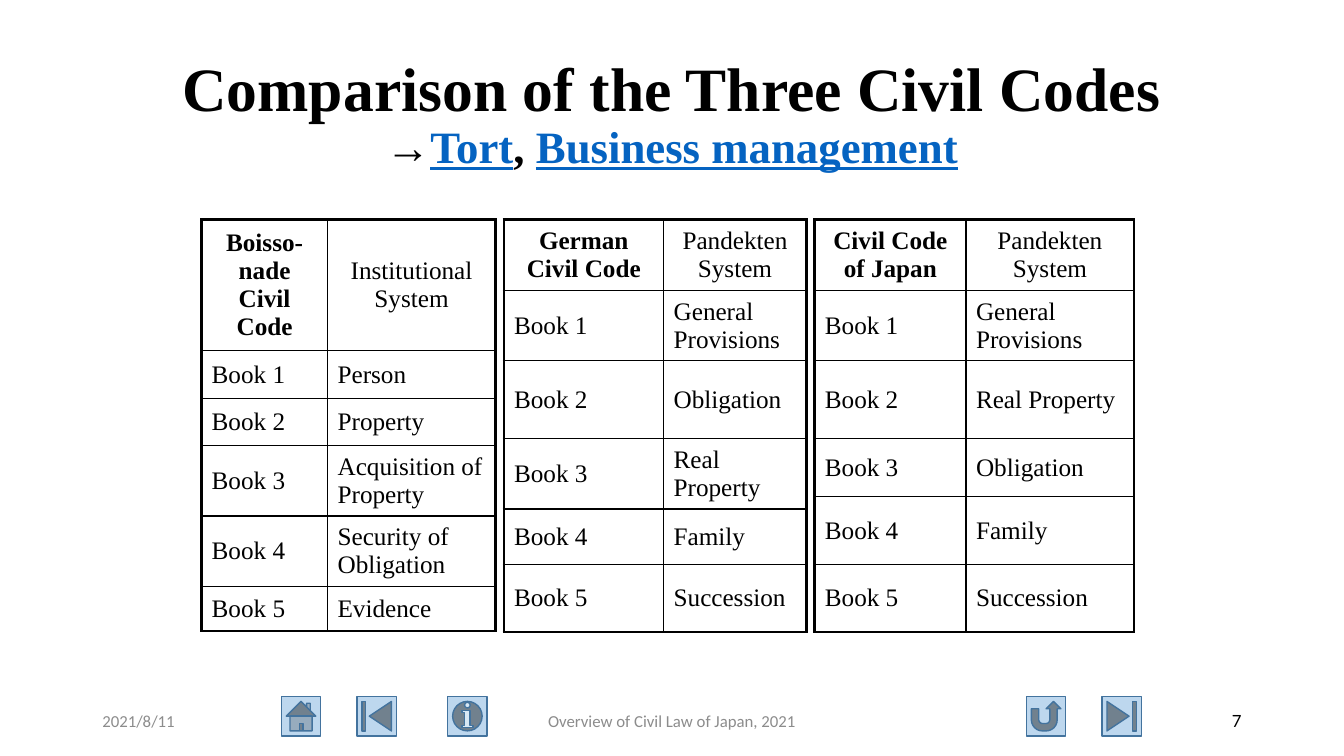
from dataclasses import dataclass
from typing import NamedTuple

from lxml.etree import SubElement
from pptx import Presentation
from pptx.dml.color import RGBColor
from pptx.enum.shapes import MSO_SHAPE as Kind
from pptx.enum.text import MSO_ANCHOR as Anchor, MSO_AUTO_SIZE as Fit, PP_ALIGN as Align
from pptx.oxml.ns import qn
from pptx.util import Inches, Pt

WIDE, HIGH = Inches(13.333), Inches(7.5)


@dataclass(frozen=True)
class Theme:
    ink: str = "000000"
    link: str = "0563C1"
    gray: str = "8C8C8C"
    fill: str = "BDD7EE"
    edge: str = "43739E"
    serif: str = "Times New Roman"
    sans: str = "Calibri"
    digit: str = "Lato"
    head: int = 44
    sub: int = 32
    cell: int = 18
    foot: int = 12
    thin: float = 1
    thick: float = 2.25


class Style(NamedTuple):
    font: str
    size: int
    color: str
    bold: bool = False
    under: bool = False


class Code(NamedTuple):
    left: int
    cols: tuple[int, int]
    rows: tuple[int, ...]
    name: str
    system: str
    books: tuple[str, ...]


class Button(NamedTuple):
    left: float
    kind: Kind


class Note(NamedTuple):
    left: float
    width: float
    text: str
    align: Align
    style: Style


THEME = Theme()
TOP = 218
HEAD = Style(THEME.serif, THEME.head, THEME.ink, True)
SUB = Style(THEME.serif, THEME.sub, THEME.ink, True)
LINK = Style(THEME.serif, THEME.sub, THEME.link, True, True)
CELL = Style(THEME.serif, THEME.cell, THEME.ink)
NAME = CELL._replace(bold=True)
FOOT = Style(THEME.sans, THEME.foot, THEME.gray)
PAGE = Style(THEME.digit, THEME.foot, THEME.ink)

CODES = (
    Code(24, (15, 20), (130, 47, 47, 70, 70, 44),
         "Boisso-nade Civil Code", "Institutional System",
         ("Person", "Property", "Acquisition of Property",
          "Security of Obligation", "Evidence")),
    Code(60, (19, 17), (70, 70, 77, 70, 55, 67),
         "German Civil Code", "Pandekten System",
         ("General Provisions", "Obligation", "Real Property",
          "Family", "Succession")),
    Code(97, (18, 20), (70, 70, 77, 58, 67, 67),
         "Civil Code of Japan", "Pandekten System",
         ("General Provisions", "Real Property", "Obligation",
          "Family", "Succession")),
)
BUTTONS = (
    Button(33.5, Kind.ACTION_BUTTON_HOME),
    Button(42.5, Kind.ACTION_BUTTON_BEGINNING),
    Button(53.3, Kind.ACTION_BUTTON_INFORMATION),
    Button(122.2, Kind.ACTION_BUTTON_RETURN),
    Button(131.2, Kind.ACTION_BUTTON_END),
)
NOTES = (
    Note(11, 36, "2021/8/11", Align.LEFT, FOOT),
    Note(53, 54, "Overview of Civil Law of Japan, 2021", Align.CENTER, FOOT),
    Note(113, 36, "7", Align.RIGHT, PAGE),
)


def col(count: float) -> int:
    """Width of grid columns, 160 to the slide."""
    return round(WIDE * count / 160)


def row(count: float) -> int:
    """Height of grid rows, 750 to the slide."""
    return round(HIGH * count / 750)


def add_run(para, text: str, style: Style) -> None:
    run = para.add_run()
    run.text = text
    font = run.font
    font.name, font.size = style.font, Pt(style.size)
    font.bold, font.underline = style.bold, style.under
    font.color.rgb = RGBColor.from_string(style.color)


def add_edge(cell, side: str, width: float) -> None:
    line = SubElement(cell._tc.get_or_add_tcPr(), qn(f"a:ln{side}"), w=str(Pt(width)))
    fill = SubElement(line, qn("a:solidFill"))
    SubElement(fill, qn("a:srgbClr"), val=THEME.ink)


def fill_cell(cell, text: str, style: Style, align: Align, outer: str) -> None:
    """Write one cell; the sides named in outer get the thick line."""
    for side in "LRTB":
        add_edge(cell, side, THEME.thick if side in outer else THEME.thin)
    cell.fill.background()
    cell.vertical_anchor = Anchor.MIDDLE
    para = cell.text_frame.paragraphs[0]
    para.alignment = align
    add_run(para, text, style)


def add_code(slide, code: Code) -> None:
    pairs = [(code.name, code.system)]
    pairs += [(f"Book {n}", book) for n, book in enumerate(code.books, 1)]
    table = slide.shapes.add_table(
        len(pairs), 2, col(code.left), row(TOP),
        col(sum(code.cols)), row(sum(code.rows))).table
    table.first_row = table.horz_banding = False
    for part, width in zip(table.columns, code.cols):
        part.width = col(width)
    for part, height in zip(table.rows, code.rows):
        part.height = row(height)
    last = len(pairs) - 1
    for y, pair in enumerate(pairs):
        for x, text in enumerate(pair):
            outer = "LR"[x] + ("T" if y == 0 else "B" if y == last else "")
            style = NAME if x == y == 0 else CELL
            align = Align.LEFT if y else Align.CENTER
            fill_cell(table.cell(y, x), text, style, align, outer)


def add_button(slide, button: Button) -> None:
    shape = slide.shapes.add_shape(
        button.kind, col(button.left), row(691), row(39), row(39))
    shape.shadow.inherit = False
    shape.fill.solid()
    shape.fill.fore_color.rgb = RGBColor.from_string(THEME.fill)
    shape.line.color.rgb = RGBColor.from_string(THEME.edge)
    shape.line.width = Pt(THEME.thin)


def add_note(slide, note: Note) -> None:
    frame = slide.shapes.add_textbox(
        col(note.left), row(695), col(note.width), row(40)).text_frame
    frame.word_wrap = True
    frame.vertical_anchor = Anchor.MIDDLE
    para = frame.paragraphs[0]
    para.alignment = note.align
    add_run(para, note.text, note.style)


def set_title(title) -> None:
    title.left, title.top = col(19.5), row(36)
    title.width, title.height = col(121), row(158)
    frame = title.text_frame
    frame.auto_size, frame.word_wrap = Fit.NONE, True
    frame.vertical_anchor = Anchor.MIDDLE
    para = frame.paragraphs[0]
    para.alignment, para.line_spacing = Align.CENTER, 0.9
    add_run(para, "Comparison of the Three Civil Codes", HEAD)
    para.add_line_break()
    for text, style in (("→", SUB), ("Tort", LINK), (", ", SUB),
                        ("Business management", LINK)):
        add_run(para, text, style)


def main() -> None:
    deck = Presentation()
    deck.slide_width, deck.slide_height = WIDE, HIGH
    slide = deck.slides.add_slide(deck.slide_layouts.get_by_name("Title Only"))
    set_title(slide.shapes.title)
    for button in BUTTONS:
        add_button(slide, button)
    for code in CODES:
        add_code(slide, code)
    for note in NOTES:
        add_note(slide, note)
    deck.save("out.pptx")


if __name__ == "__main__":
    main()
